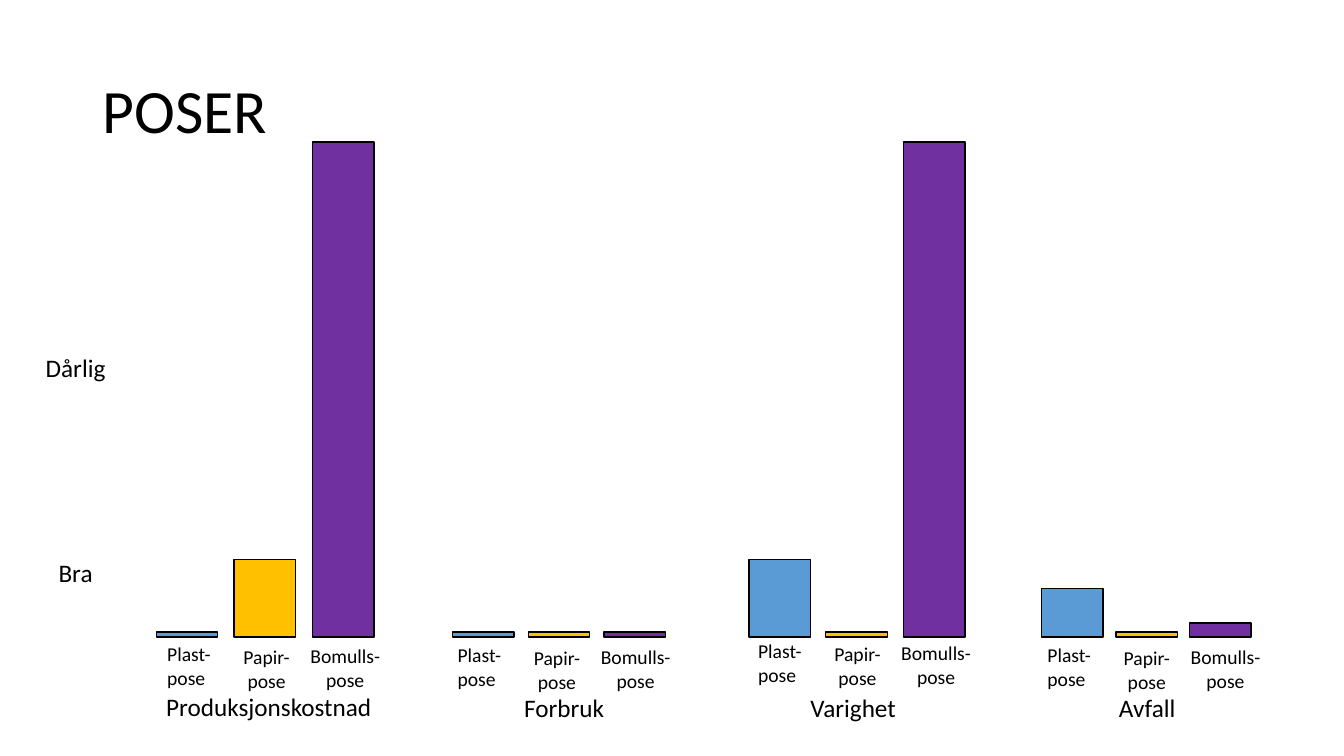
import pptx
import pptx.dml.color
import pptx.enum.shapes
import pptx.enum.text
import pptx.util
from pptx.util import Inches, Pt

ALIGN = pptx.enum.text.PP_ALIGN
ANCHOR = pptx.enum.text.MSO_ANCHOR
AUTO_SIZE = pptx.enum.text.MSO_AUTO_SIZE

BASELINE = 6.32
BAR_WIDTH = 0.61
BAG_COLORS = ["5B9BD5", "FFC000", "7030A0"]

# name, offset from the group's label corner, width, alignment
BAG_LABELS = [
    ("Plast-pose", 0, 0, 0.66, ALIGN.LEFT),
    ("Papir-pose", 0.57, 0.03, 1.03, ALIGN.CENTER),
    ("Bomulls-pose", 1.35, 0.02, 1.03, ALIGN.CENTER),
]

# category, its box (left, top, width), label corner, bar lefts, bar heights
GROUPS = [
    ("Produksjonskostnad", (1.55, 6.81, 2.25), (1.56, 6.32), (1.55, 2.32, 3.1), (0.05, 0.77, 4.91)),
    ("Forbruk", (5.1, 6.82, 1), (4.44, 6.33), (4.49, 5.24, 5.99), (0.05, 0.05, 0.05)),
    ("Varighet", (7.94, 6.82, 1.06), (7.42, 6.29), (7.43, 8.19, 8.96), (0.77, 0.05, 4.91)),
    ("Avfall", (11, 6.82, 0.77), (10.29, 6.33), (10.33, 11.07, 11.8), (0.48, 0.05, 0.14)),
]


def color(hex_string):
    return pptx.dml.color.RGBColor.from_string(hex_string)


class BagSlide:
    font_name = "Calibri"
    ink = "000000"

    def __init__(self, page):
        self.page = page

    def style(self, para, size, align):
        para.alignment = align
        para.font.name = self.font_name
        para.font.size = Pt(size)
        para.font.color.rgb = color(self.ink)

    def title(self, text, left, top, width, height):
        box = self.page.shapes.title
        box.left, box.top = Inches(left), Inches(top)
        box.width, box.height = Inches(width), Inches(height)
        frame = box.text_frame
        frame.text = text
        frame.auto_size = AUTO_SIZE.NONE
        frame.vertical_anchor = ANCHOR.MIDDLE
        frame.paragraphs[0].line_spacing = 0.9
        self.style(frame.paragraphs[0], 44, ALIGN.LEFT)

    def text(self, text, left, top, width, height, size=18, align=ALIGN.LEFT, wrap=True):
        box = self.page.shapes.add_textbox(
            Inches(left), Inches(top), Inches(width), Inches(height))
        frame = box.text_frame
        frame.text = text
        frame.word_wrap = wrap
        for para in frame.paragraphs:
            self.style(para, size, align)
        return frame

    def bar(self, left, height, fill):
        """Draw a bar standing on the common baseline."""
        shape = self.page.shapes.add_shape(
            pptx.enum.shapes.MSO_SHAPE.RECTANGLE, Inches(left),
            Inches(BASELINE - height), Inches(BAR_WIDTH), Inches(height))
        shape.shadow.inherit = False
        shape.fill.solid()
        shape.fill.fore_color.rgb = color(fill)
        shape.line.color.rgb = color(self.ink)
        shape.line.width = Pt(1)

    def scale(self, words, left, top, width, height):
        """Write the words of the vertical scale far apart in one box."""
        frame = self.text("\n".join(words), left, top, width, height, align=ALIGN.CENTER)
        frame.vertical_anchor = ANCHOR.MIDDLE
        for para in frame.paragraphs:
            para.line_spacing = 0.9
        for para in frame.paragraphs[1:]:
            para.space_before = Pt(127)


def main():
    deck = pptx.Presentation()
    deck.slide_width, deck.slide_height = Inches(13.33), Inches(7.5)
    slide = BagSlide(deck.slides.add_slide(deck.slide_layouts[5]))
    slide.title("POSER", 0.92, 0.4, 11.5, 1.45)
    slide.scale(["Dårlig", "Bra"], 0.25, 2.15, 1, 5.06)
    for category, (left, top, width), corner, bar_lefts, heights in GROUPS:
        slide.text(category, left, top, width, 0.4, wrap=False)
        for bar_left, height, fill in zip(bar_lefts, heights, BAG_COLORS):
            slide.bar(bar_left, height, fill)
        for bag, right, down, label_width, align in BAG_LABELS:
            slide.text(bag, corner[0] + right, corner[1] + down, label_width, 0.57, 14, align)
    deck.save("out.pptx")


if __name__ == "__main__":
    main()
